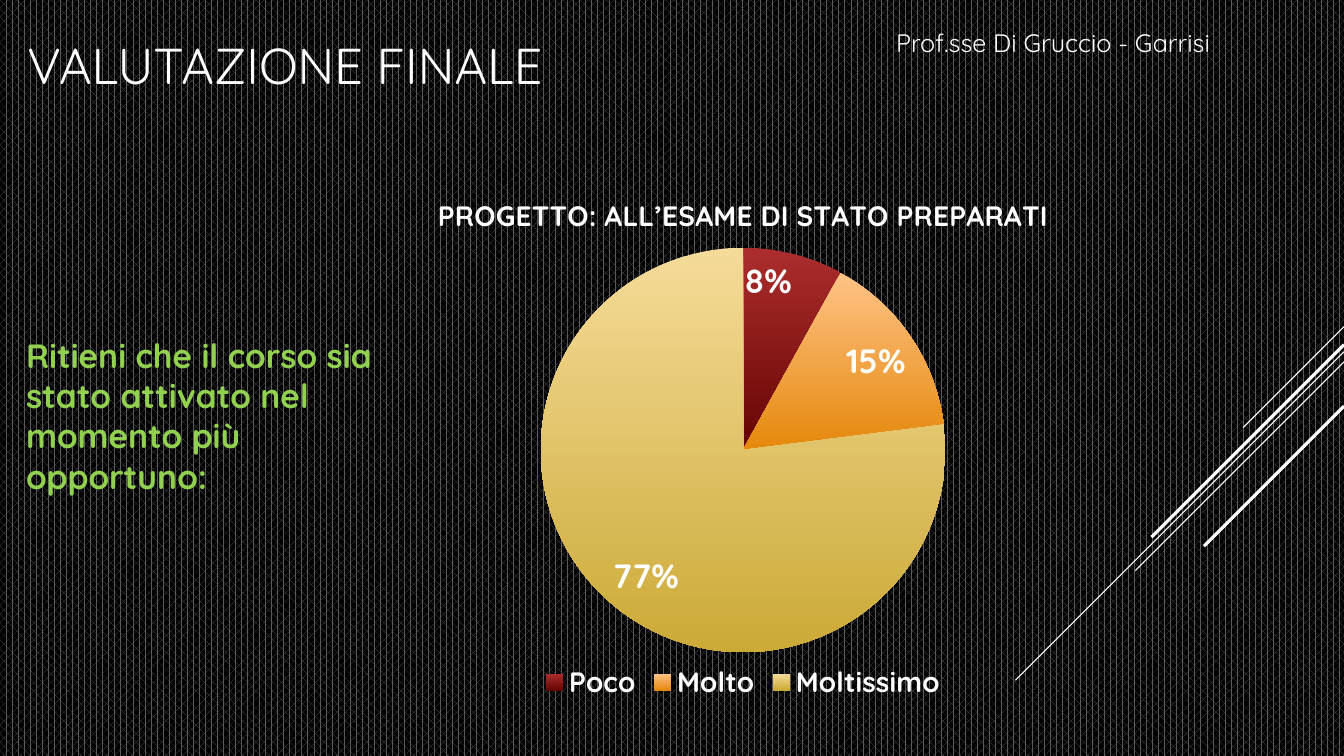
from dataclasses import dataclass

from lxml import etree
from pptx import Presentation
from pptx.chart.data import CategoryChartData
from pptx.dml.color import RGBColor
from pptx.enum.chart import XL_CHART_TYPE, XL_LABEL_POSITION, XL_LEGEND_POSITION
from pptx.enum.dml import MSO_PATTERN
from pptx.enum.shapes import MSO_CONNECTOR
from pptx.enum.text import MSO_ANCHOR, PP_ALIGN
from pptx.oxml import parse_xml
from pptx.oxml.ns import nsdecls, qn
from pptx.util import Inches, Pt

PIE = XL_CHART_TYPE.PIE
INSIDE_END = XL_LABEL_POSITION.INSIDE_END
LEGEND_BOTTOM = XL_LEGEND_POSITION.BOTTOM
PERCENT_60 = MSO_PATTERN.PERCENT_60
STRAIGHT = MSO_CONNECTOR.STRAIGHT
MIDDLE = MSO_ANCHOR.MIDDLE
TOP = MSO_ANCHOR.TOP
LEFT = PP_ALIGN.LEFT

SLIDE_WIDTH = Inches(13.33)
SLIDE_HEIGHT = Inches(7.5)


@dataclass(frozen=True)
class Theme:
    font: str = "Quicksand"
    text: str = "FFFFFF"
    accent: str = "92D050"
    weave: str = "595959"
    ground: str = "000000"
    heading: int = 36
    question: int = 24
    percent: int = 24
    caption: int = 20
    author: int = 18
    thin: float = 0.75
    thick: float = 2.25


@dataclass(frozen=True)
class Box:
    left: int
    top: int
    width: int
    height: int


THEME = Theme()
ANSWERS = [
    ("Poco", 8, ("AC2D2D", "650503")),
    ("Molto", 15, ("FFC386", "E5880C")),
    ("Moltissimo", 77, ("F5DB99", "CCAA37")),
]
RAYS = [
    (0, 30.7, THEME.thin),
    (7.1, 100, THEME.thin),
    (10, 63.5, THEME.thin),
    (5.1, 58.6, THEME.thick),
    (22.5, 42.6, THEME.thick),
]


def share(total, percent):
    return round(total * percent / 100)


def slide_box(left, top, width, height):
    return Box(
        share(SLIDE_WIDTH, left),
        share(SLIDE_HEIGHT, top),
        share(SLIDE_WIDTH, width),
        share(SLIDE_HEIGHT, height),
    )


def style_font(font, size, color=THEME.text, bold=False):
    font.name = THEME.font
    font.size = Pt(size)
    font.bold = bold
    font.color.rgb = RGBColor.from_string(color)


def write_text(frame, words, size, color=THEME.text, bold=False, anchor=TOP):
    frame.word_wrap = True
    frame.vertical_anchor = anchor
    paragraph = frame.paragraphs[0]
    paragraph.alignment = LEFT
    run = paragraph.add_run()
    run.text = words
    style_font(run.font, size, color, bold)


def paint_background(slide):
    fill = slide.background.fill
    fill.patterned()
    fill.pattern = PERCENT_60
    fill.fore_color.rgb = RGBColor.from_string(THEME.weave)
    fill.back_color.rgb = RGBColor.from_string(THEME.ground)


def draw_rays(slide, box):
    right = box.left + box.width
    for start, reach, weight in RAYS:
        y = box.top + share(box.height, start)
        run = share(box.width, reach)
        ray = slide.shapes.add_connector(STRAIGHT, right, y, right - run, y + run)
        ray.line.color.rgb = RGBColor.from_string(THEME.text)
        ray.line.width = Pt(weight)
        etree.SubElement(ray.element.spPr, qn("a:effectLst"))


def place_heading(slide, box, words):
    heading = slide.shapes.title
    heading.left, heading.top = box.left, box.top
    heading.width, heading.height = box.width, box.height
    write_text(heading.text_frame, words, THEME.heading, anchor=MIDDLE)


def place_note(slide, box, words, size, **style):
    note = slide.shapes.add_textbox(box.left, box.top, box.width, box.height)
    write_text(note.text_frame, words, size, **style)


def fix_plot_area(chart, x, y, w, h):
    plot_area = chart.element.find(".//" + qn("c:plotArea"))
    for previous in plot_area.findall(qn("c:layout")):
        plot_area.remove(previous)
    sides = "".join(
        f'<c:{side} val="{value}"/>'
        for side, value in (("x", x), ("y", y), ("w", w), ("h", h))
    )
    plot_area.insert(0, parse_xml(
        f'<c:layout {nsdecls("c")}><c:manualLayout>'
        '<c:layoutTarget val="inner"/><c:xMode val="edge"/><c:yMode val="edge"/>'
        f"{sides}</c:manualLayout></c:layout>"
    ))


def place_answers(slide, box, caption):
    data = CategoryChartData()
    data.categories = [answer for answer, _, _ in ANSWERS]
    data.add_series("Series 1", [value for _, value, _ in ANSWERS])
    chart = slide.shapes.add_chart(
        PIE, box.left, box.top, box.width, box.height, data
    ).chart
    style_font(chart.font, THEME.caption)

    chart.has_title = True
    chart.chart_title.include_in_layout = False
    title_run = chart.chart_title.text_frame.paragraphs[0].add_run()
    title_run.text = caption
    style_font(title_run.font, THEME.caption, bold=True)

    chart.has_legend = True
    chart.legend.position = LEGEND_BOTTOM
    chart.legend.include_in_layout = False
    style_font(chart.legend.font, THEME.caption, bold=True)

    plot = chart.plots[0]
    plot.vary_by_categories = True
    plot.has_data_labels = True
    labels = plot.data_labels
    labels.show_percentage = True
    labels.show_value = False
    labels.number_format = "0%"
    labels.number_format_is_linked = False
    labels.position = INSIDE_END
    style_font(labels.font, THEME.percent, bold=True)

    for index, (_, _, shades) in enumerate(ANSWERS):
        slice_format = plot.series[0].points[index].format
        slice_format.line.fill.background()
        slice_format.fill.gradient()
        slice_format.fill.gradient_angle = 270
        for position, (stop, shade) in enumerate(
            zip(slice_format.fill.gradient_stops, shades)
        ):
            stop.position = position
            stop.color.rgb = RGBColor.from_string(shade)
    fix_plot_area(chart, 0.02, 0.14, 0.96, 0.76)


def build_evaluation(deck):
    slide = deck.slides.add_slide(deck.slide_layouts[5])
    paint_background(slide)
    draw_rays(slide, slide_box(75.55, 43.2, 24.45, 46.8))
    place_heading(slide, slide_box(1.28, 2.4, 55.06, 12.27), "VALUTAZIONE FINALE")
    place_answers(
        slide,
        slide_box(23.93, 22.93, 62.72, 70.4),
        "PROGETTO: ALL’ESAME DI STATO PREPARATI",
    )
    place_note(
        slide,
        slide_box(65.94, 2.93, 34.06, 5.33),
        "Prof.sse Di Gruccio - Garrisi",
        THEME.author,
    )
    place_note(
        slide,
        slide_box(1.2, 43.6, 31.28, 22.93),
        "Ritieni che il corso sia stato attivato nel momento più opportuno:",
        THEME.question,
        color=THEME.accent,
        bold=True,
    )


def main():
    deck = Presentation()
    deck.slide_width = SLIDE_WIDTH
    deck.slide_height = SLIDE_HEIGHT
    build_evaluation(deck)
    deck.save("out.pptx")


if __name__ == "__main__":
    main()
